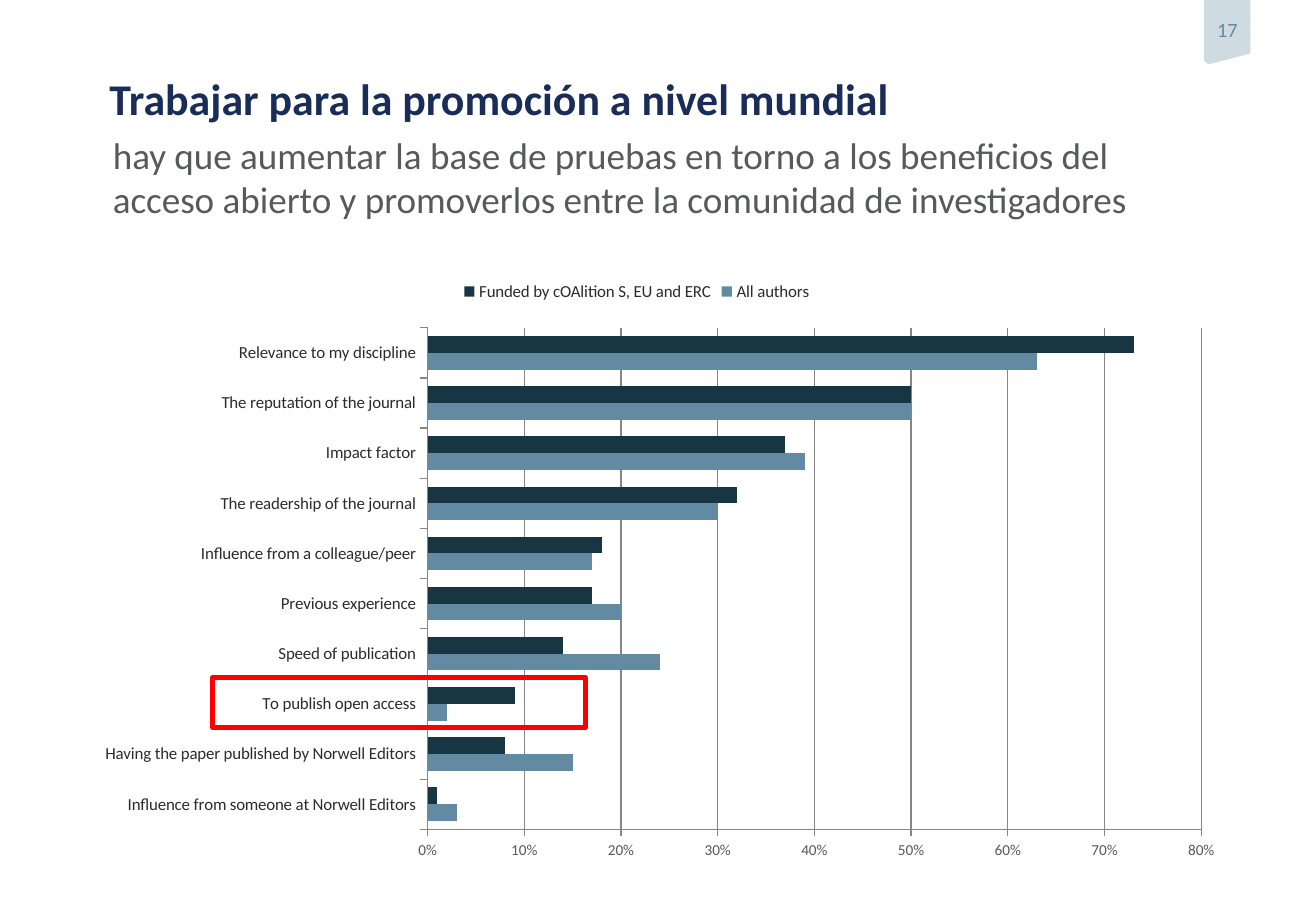
"""Build a slide with a bar chart on what authors look for in a journal."""
from lxml.etree import SubElement
from pptx import Presentation
from pptx.chart.data import CategoryChartData
from pptx.dml.color import RGBColor
from pptx.enum.chart import XL_CHART_TYPE, XL_LEGEND_POSITION, XL_TICK_MARK
from pptx.enum.shapes import MSO_SHAPE
from pptx.enum.text import MSO_ANCHOR, MSO_AUTO_SIZE, PP_ALIGN
from pptx.oxml.ns import qn
from pptx.util import Inches, Pt

FONT = "Calibri"
NAVY, GREY, BLACK = "1A2D59", "58595B", "2C2C2D"
STEEL, TEAL, PALE, RED, RULE = "628BA3", "183642", "CEDBE0", "FF0000", "868686"
REASONS = [
    ("Influence from someone at Norwell Editors", 0.03, 0.01),
    ("Having the paper published by Norwell Editors", 0.15, 0.08),
    ("To publish open access", 0.02, 0.09),
    ("Speed of publication", 0.24, 0.14),
    ("Previous experience", 0.2, 0.17),
    ("Influence from a colleague/peer", 0.17, 0.18),
    ("The readership of the journal", 0.3, 0.32),
    ("Impact factor", 0.39, 0.37),
    ("The reputation of the journal", 0.5, 0.5),
    ("Relevance to my discipline", 0.63, 0.73),
]
AUTHOR_GROUPS = [("All authors", STEEL), ("Funded by cOAlition S, EU and ERC", TEAL)]
PLOT_AREA = {"x": 0.323, "y": 0.099, "w": 0.655, "h": 0.836}


def colour(value):
    """Turn a hex string into a colour."""
    return RGBColor.from_string(value)


def box(left, top, width, height):
    """Return a position and size in inches."""
    return Inches(left), Inches(top), Inches(width), Inches(height)


def style_font(font, size, hex_colour, bold=False):
    """Set the typeface, size, colour and weight of a font."""
    font.name = FONT
    font.size = Pt(size)
    font.bold = bold
    font.color.rgb = colour(hex_colour)


def write_text(frame, text, size, hex_colour, bold=False, align=PP_ALIGN.LEFT):
    """Write one run into the first paragraph of a frame."""
    paragraph = frame.paragraphs[0]
    paragraph.alignment = align
    run = paragraph.add_run()
    run.text = text
    style_font(run.font, size, hex_colour, bold)
    return paragraph


def set_margins(frame, bottom=0):
    """Remove the margins of a frame, save for the bottom one."""
    frame.margin_left = frame.margin_top = frame.margin_right = 0
    frame.margin_bottom = Inches(bottom)


def add_page_tag(slide, number):
    """Draw the slanted tag that holds the page number."""
    corners = [(10.29, 0), (10.29, 0.44), (9.95, 0.53), (9.93, 0.52), (9.91, 0.5)]
    builder = slide.shapes.build_freeform(Inches(9.91), 0, scale=1.0)
    builder.add_line_segments([(Inches(x), Inches(y)) for x, y in corners], close=True)
    shape = builder.convert_to_shape()
    shape.shadow.inherit = False
    shape.fill.solid()
    shape.fill.fore_color.rgb = colour(PALE)
    shape.line.fill.background()
    frame = shape.text_frame
    set_margins(frame, 0.04)
    frame.word_wrap = False
    frame.vertical_anchor = MSO_ANCHOR.MIDDLE
    write_text(frame, number, 12, STEEL, align=PP_ALIGN.CENTER)


def add_title(slide, text):
    """Place and format the title."""
    title = slide.shapes.title
    title.left, title.top, title.width, title.height = box(0.9, 0.59, 9.01, 0.41)
    frame = title.text_frame
    set_margins(frame)
    frame.auto_size = MSO_AUTO_SIZE.NONE
    frame.vertical_anchor = MSO_ANCHOR.TOP
    write_text(frame, text, 26, NAVY, bold=True)


def add_subtitle(slide, text):
    """Add the text below the title."""
    frame = slide.shapes.add_textbox(*box(0.83, 1.04, 9.28, 1.16)).text_frame
    frame.word_wrap = True
    write_text(frame, text, 22, GREY).space_after = Pt(6)


def format_axis(axis, size, hex_colour):
    """Give an axis its font, line and ticks."""
    style_font(axis.tick_labels.font, size, hex_colour)
    axis.format.line.color.rgb = colour(RULE)
    axis.major_tick_mark = XL_TICK_MARK.OUTSIDE
    axis.minor_tick_mark = XL_TICK_MARK.NONE


def fix_plot_area(chart):
    """Set the inner plot area as fractions of the chart."""
    plot_area = chart.plots[0]._element.getparent()
    layout = plot_area.find(qn("c:layout"))
    if layout is None:
        layout = SubElement(plot_area, qn("c:layout"))
        plot_area.insert(0, layout)
    manual = SubElement(layout, qn("c:manualLayout"))
    settings = {"layoutTarget": "inner", "xMode": "edge", "yMode": "edge", **PLOT_AREA}
    for name, value in settings.items():
        SubElement(manual, qn(f"c:{name}")).set("val", str(value))


def add_reasons_chart(slide):
    """Add the clustered bars for both groups of authors."""
    labels, *columns = zip(*REASONS)
    data = CategoryChartData(number_format="0%")
    data.categories = labels
    for (name, _), values in zip(AUTHOR_GROUPS, columns):
        data.add_series(name, values)
    chart = slide.shapes.add_chart(
        XL_CHART_TYPE.BAR_CLUSTERED, *box(0.38, 2.21, 9.72, 4.94), data
    ).chart
    style_font(chart.font, 10, GREY)
    chart.has_title = False
    chart.has_legend = True
    chart.legend.position = XL_LEGEND_POSITION.TOP
    chart.legend.include_in_layout = False
    style_font(chart.legend.font, 10, BLACK)
    plot = chart.plots[0]
    plot.gap_width = 100
    plot.overlap = 0
    plot.vary_by_categories = False
    for series, (_, fill) in zip(plot.series, AUTHOR_GROUPS):
        series.format.fill.solid()
        series.format.fill.fore_color.rgb = colour(fill)
    format_axis(chart.category_axis, 10, BLACK)
    axis = chart.value_axis
    format_axis(axis, 9, GREY)
    axis.minimum_scale, axis.maximum_scale, axis.major_unit = 0, 0.8, 0.1
    axis.tick_labels.number_format = "0%"
    axis.tick_labels.number_format_is_linked = False
    axis.has_major_gridlines = True
    axis.major_gridlines.format.line.color.rgb = colour(RULE)
    fix_plot_area(chart)


def add_highlight(slide):
    """Frame the open access row."""
    shape = slide.shapes.add_shape(MSO_SHAPE.RECTANGLE, *box(1.75, 5.58, 3.07, 0.41))
    shape.shadow.inherit = False
    shape.fill.background()
    shape.line.color.rgb = colour(RED)
    shape.line.width = Pt(3)


def main():
    """Build and save the presentation."""
    presentation = Presentation()
    presentation.slide_width = Inches(10.83)
    presentation.slide_height = Inches(7.5)
    slide = presentation.slides.add_slide(presentation.slide_layouts[5])
    add_page_tag(slide, "17")
    add_title(slide, "Trabajar para la promoción a nivel mundial")
    add_subtitle(
        slide,
        "hay que aumentar la base de pruebas en torno a los beneficios del "
        "acceso abierto y promoverlos entre la comunidad de investigadores",
    )
    add_reasons_chart(slide)
    add_highlight(slide)
    presentation.save("out.pptx")


if __name__ == "__main__":
    main()
